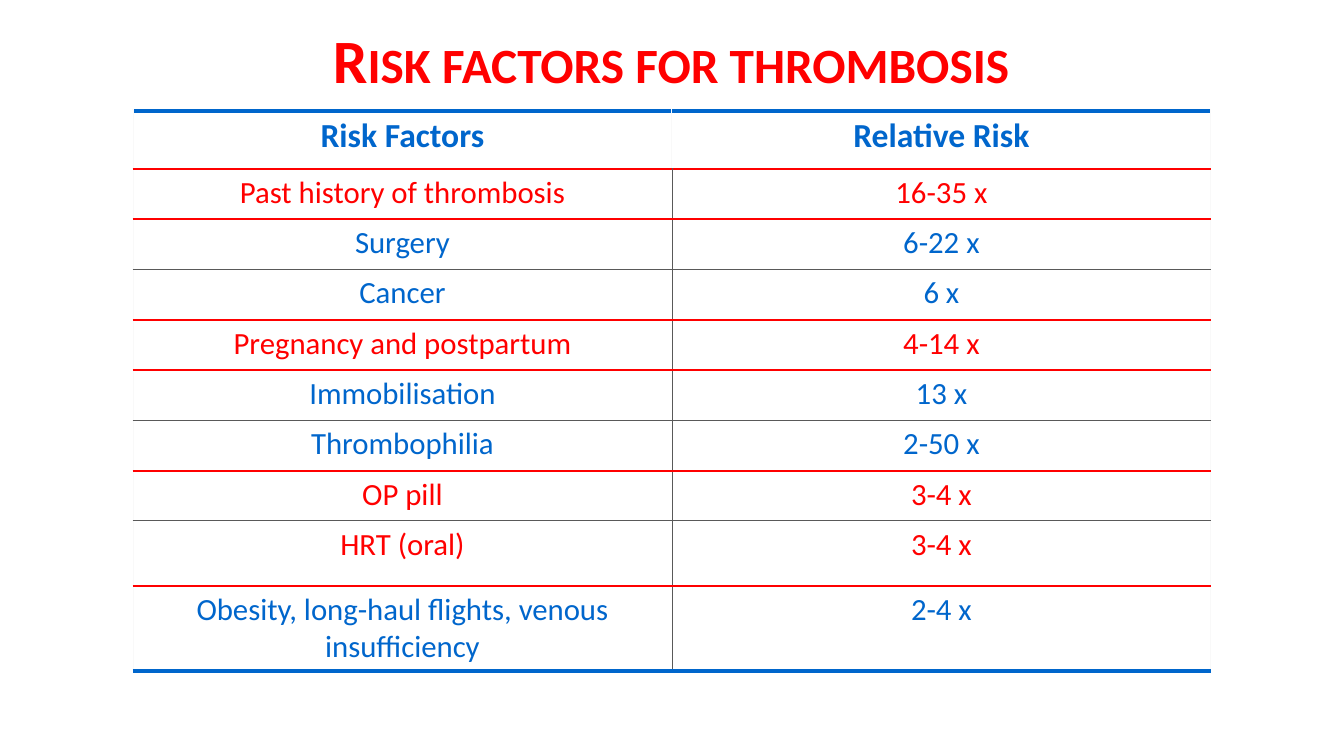
from dataclasses import dataclass
from itertools import pairwise

import pptx
import pptx.dml.color
import pptx.enum.text
import pptx.oxml
import pptx.oxml.ns
import pptx.util

EMU_PER_INCH = 914400
PX_PER_INCH = 100.8


@dataclass(frozen=True)
class Theme:
    font: str = "Calibri"
    red: str = "FF0000"
    blue: str = "0066CC"
    grey: str = "595959"
    pale: str = "F9F9F9"
    title_size: int = 44
    header_size: int = 24
    body_size: int = 22


@dataclass(frozen=True)
class Border:
    color: str
    points: float


@dataclass(frozen=True)
class RiskRow:
    factor: str
    risk: str
    color: str
    bottom: Border
    size: int = Theme.body_size
    bold: bool = False


THEME = Theme()
FRAME = Border(THEME.blue, 3)
STRONG = Border(THEME.red, 1.5)
THIN = Border(THEME.grey, 0.5)
SIDE = Border(THEME.pale, 0.75)

ROWS = [
    RiskRow("Risk Factors", "Relative Risk", THEME.blue, STRONG, THEME.header_size, True),
    RiskRow("Past history of thrombosis", "16-35 x", THEME.red, STRONG),
    RiskRow("Surgery", "6-22 x", THEME.blue, THIN),
    RiskRow("Cancer", "6 x", THEME.blue, STRONG),
    RiskRow("Pregnancy and postpartum", "4-14 x", THEME.red, STRONG),
    RiskRow("Immobilisation", "13 x", THEME.blue, THIN),
    RiskRow("Thrombophilia", "2-50 x", THEME.blue, STRONG),
    RiskRow("OP pill", "3-4 x", THEME.red, THIN),
    RiskRow("HRT (oral)", "3-4 x", THEME.red, STRONG),
    RiskRow("Obesity, long-haul flights, venous insufficiency", "2-4 x", THEME.blue, FRAME),
]
ROW_EDGES = [111, 169, 219, 269, 320, 370, 420, 471, 521, 586, 671]
TABLE_LEFT, COLUMN_WIDTH = 133, 539


def px(length: int) -> pptx.util.Emu:
    return pptx.util.Emu(round(length * EMU_PER_INCH / PX_PER_INCH))


def write_text(text_frame, text: str, size: int, color: str, bold: bool) -> None:
    """Write one centred paragraph."""
    paragraph = text_frame.paragraphs[0]
    paragraph.text = text
    paragraph.alignment = pptx.enum.text.PP_ALIGN.CENTER
    paragraph.font.name = THEME.font
    paragraph.font.size = pptx.util.Pt(size)
    paragraph.font.bold = bold
    paragraph.font.color.rgb = pptx.dml.color.RGBColor.from_string(color)


def set_borders(cell, borders: dict[str, Border]) -> None:
    """Add border lines; the keys must run L, R, T, B."""
    properties = cell._tc.get_or_add_tcPr()
    for side, border in borders.items():
        properties.append(pptx.oxml.parse_xml(
            f'<a:ln{side} {pptx.oxml.ns.nsdecls("a")} w="{pptx.util.Pt(border.points)}">'
            f'<a:solidFill><a:srgbClr val="{border.color}"/></a:solidFill></a:ln{side}>'
        ))


def add_title(slide) -> None:
    text_frame = slide.shapes.add_textbox(px(34), px(14), px(1274), px(82)).text_frame
    text_frame.word_wrap = True
    text_frame.vertical_anchor = pptx.enum.text.MSO_ANCHOR.BOTTOM
    text_frame.margin_left = text_frame.margin_right = 0
    text_frame.margin_top = text_frame.margin_bottom = 0
    write_text(text_frame, "Risk factors for thrombosis", THEME.title_size, THEME.red, True)
    text_frame.paragraphs[0].runs[0]._r.get_or_add_rPr().set("cap", "small")


def add_risk_table(slide) -> None:
    table = slide.shapes.add_table(
        len(ROWS), 2, px(TABLE_LEFT), px(ROW_EDGES[0]),
        px(2 * COLUMN_WIDTH), px(ROW_EDGES[-1] - ROW_EDGES[0]),
    ).table
    table.first_row = table.horz_banding = False
    for column in table.columns:
        column.width = px(COLUMN_WIDTH)

    top = FRAME
    for index, (row, (upper, lower)) in enumerate(zip(ROWS, pairwise(ROW_EDGES))):
        table.rows[index].height = px(lower - upper)
        middle = SIDE if index == 0 else THIN
        cells = [(row.factor, SIDE, middle), (row.risk, middle, SIDE)]
        for column, (text, left, right) in enumerate(cells):
            cell = table.cell(index, column)
            write_text(cell.text_frame, text, row.size, row.color, row.bold)
            set_borders(cell, {"L": left, "R": right, "T": top, "B": row.bottom})
            cell.fill.background()
        top = row.bottom


def main() -> None:
    presentation = pptx.Presentation()
    presentation.slide_width, presentation.slide_height = px(1344), px(756)
    slide = presentation.slides.add_slide(presentation.slide_layouts[6])
    add_title(slide)
    add_risk_table(slide)
    presentation.save("out.pptx")


if __name__ == "__main__":
    main()
